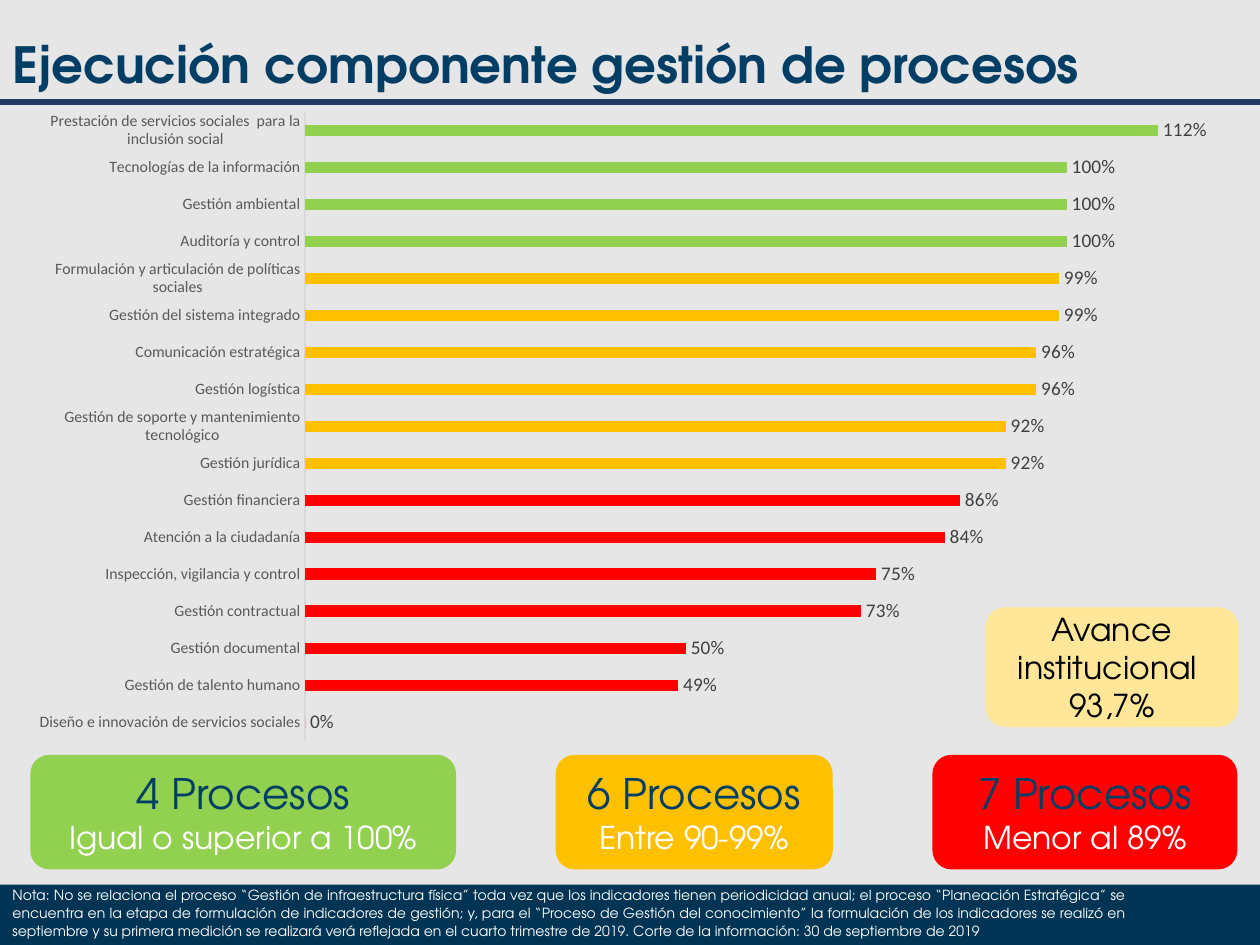
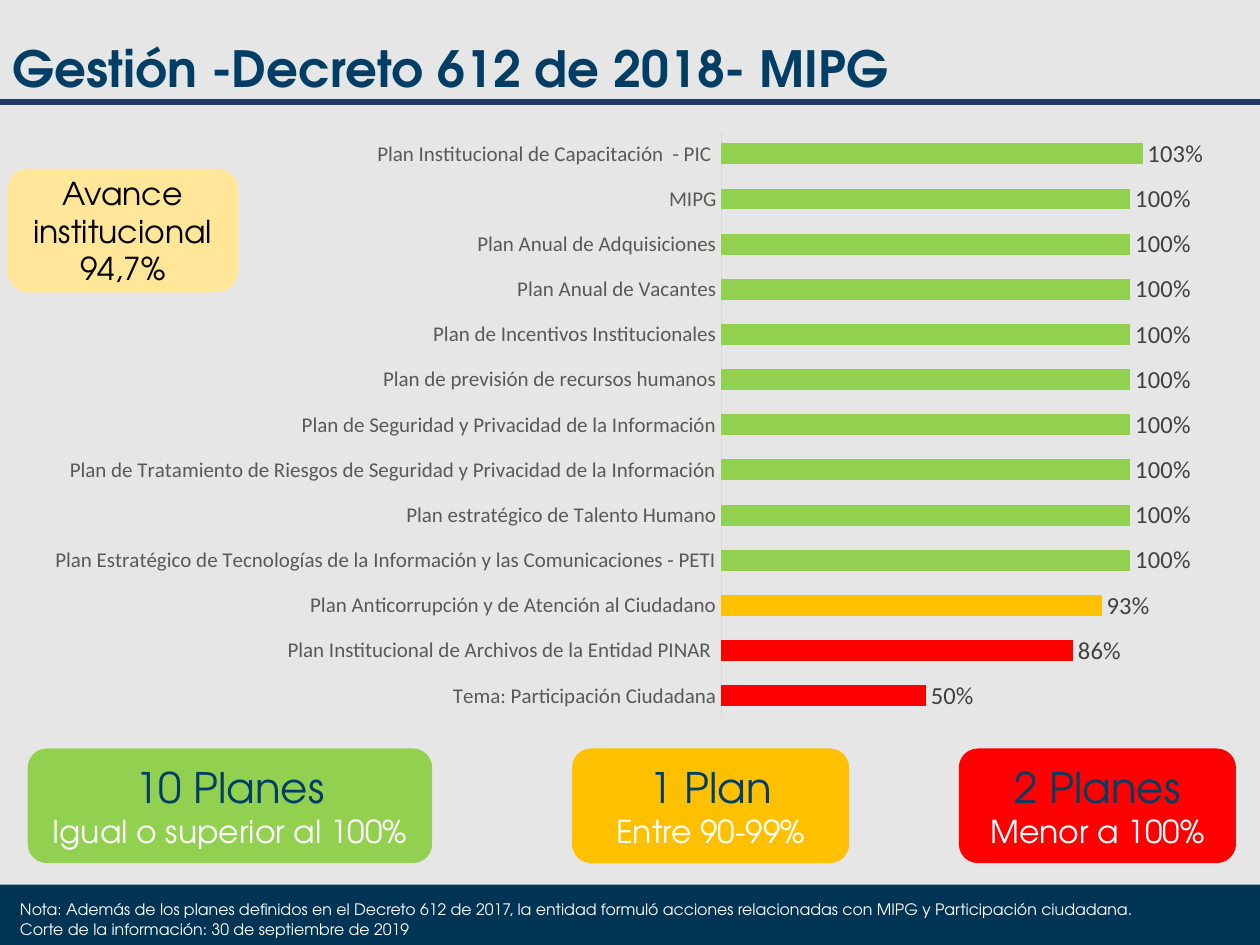
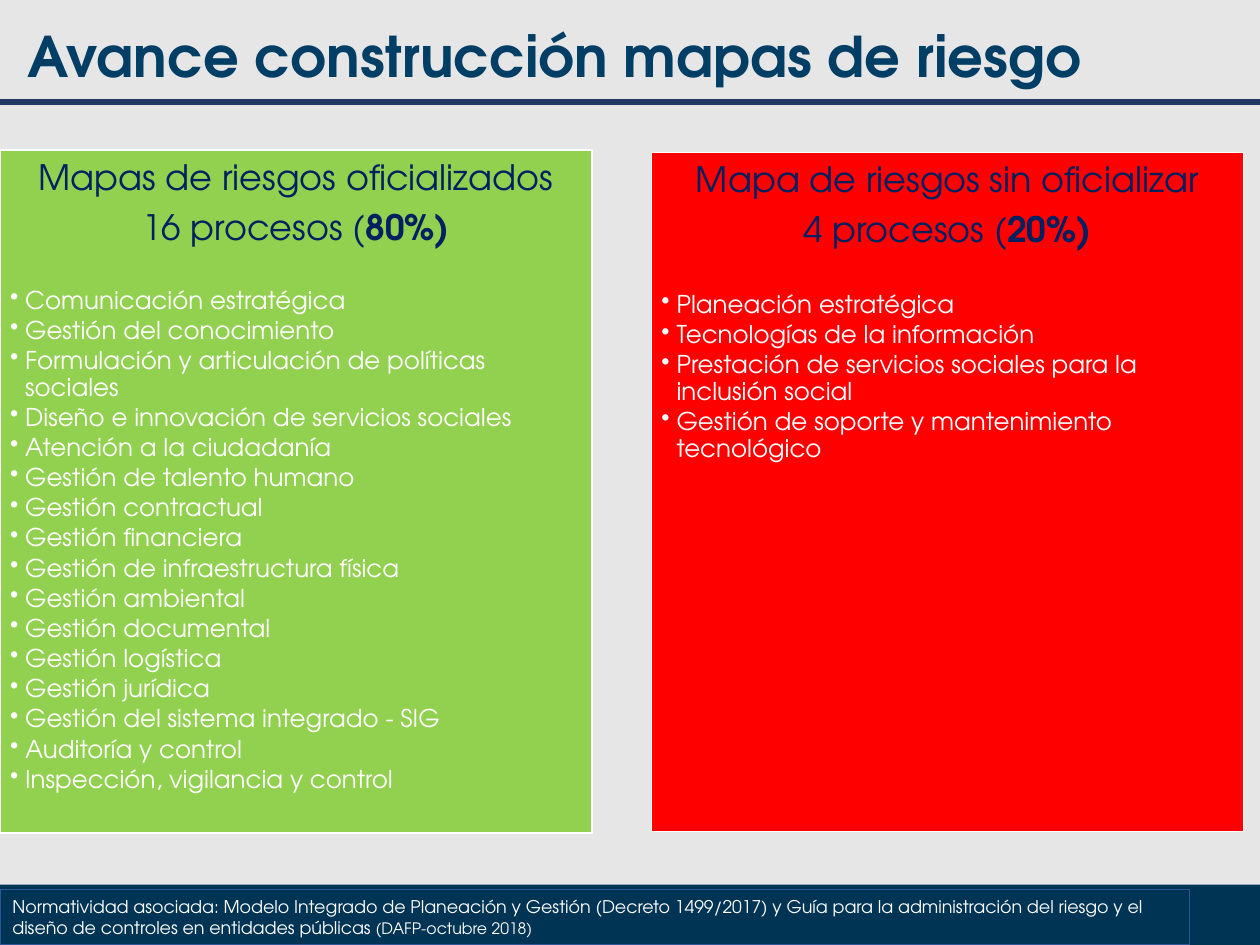
from dataclasses import dataclass

from lxml import etree
from pptx import Presentation
from pptx.chart.data import CategoryChartData
from pptx.dml.color import RGBColor
from pptx.enum.chart import XL_CHART_TYPE, XL_LABEL_POSITION, XL_TICK_MARK
from pptx.enum.shapes import MSO_CONNECTOR, MSO_SHAPE
from pptx.enum.text import MSO_ANCHOR, MSO_AUTO_SIZE, PP_ALIGN
from pptx.oxml.ns import qn
from pptx.util import Inches, Pt

RECT, ROUNDED = MSO_SHAPE.RECTANGLE, MSO_SHAPE.ROUNDED_RECTANGLE
LEFT, CENTER, JUSTIFY = PP_ALIGN.LEFT, PP_ALIGN.CENTER, PP_ALIGN.JUSTIFY
TOP, MIDDLE = MSO_ANCHOR.TOP, MSO_ANCHOR.MIDDLE
NO_FIT, GROW = MSO_AUTO_SIZE.NONE, MSO_AUTO_SIZE.SHAPE_TO_FIT_TEXT
TITLE_ONLY = 5


@dataclass(frozen=True)
class Theme:
    font: str = "TeX Gyre Adventor"
    chart_font: str = "Calibri"
    background: str = "E7E6E6"
    band: str = "003454"
    rule: str = "203864"
    title: str = "003E65"
    heading: str = "002060"
    note_border: str = "2F5597"
    white: str = "FFFFFF"
    black: str = "000000"
    green: str = "92D050"
    amber: str = "FFC000"
    red: str = "FF0000"
    progress: str = "FFE699"
    axis_text: str = "595959"
    axis_line: str = "D9D9D9"
    label: str = "404040"
    count_size: float = 24
    range_size: float = 18
    heading_size: float = 20
    bullet_size: float = 14


THEME = Theme()
STATUS_COLORS = (THEME.green, THEME.amber, THEME.red)

# Content: chart slides (places are left, top, width, height in inches)
PROCESSES = {
    "title": ("Ejecución componente gestión de procesos", 28.5, (0, 0.28, 8.82, 0.51)),
    "chart": {
        "place": (0.13, 0.79, 9.75, 5.2),
        "plot": (2.42, 0.89, 7.25, 4.99),
        "gap": 219, "overlap": 0, "axis_size": 9, "label_size": 11, "axis_width": 0.75,
        "values": [
            ("Diseño e innovación de servicios sociales", 0),
            ("Gestión de talento humano", 0.49),
            ("Gestión documental", 0.5),
            ("Gestión contractual", 0.73),
            ("Inspección, vigilancia y control", 0.75),
            ("Atención a la ciudadanía", 0.84),
            ("Gestión financiera", 0.86),
            ("Gestión jurídica", 0.92),
            ("Gestión de soporte y mantenimiento tecnológico", 0.92),
            ("Gestión logística", 0.96),
            ("Comunicación estratégica", 0.96),
            ("Gestión del sistema integrado", 0.99),
            ("Formulación y articulación de políticas sociales", 0.99),
            ("Auditoría y control", 1),
            ("Gestión ambiental", 1),
            ("Tecnologías de la información", 1),
            ("Prestación de servicios sociales  para la inclusión social", 1.12),
        ],
    },
    "cards_top": 5.99,
    "cards": [
        (0.24, 3.38, "4 Procesos", "Igual o superior a 100%"),
        (4.41, 2.2, "6 Procesos", "Entre 90-99%"),
        (7.4, 2.42, "7 Procesos", "Menor al 89%"),
    ],
    "progress": ((7.82, 4.82, 2.01, 0.95), ["Avance institucional ", "93,7%"]),
    "note": ((0, 6.98, 9.05, 0.52), 8, [
        "Nota: No se relaciona el proceso “Gestión de infraestructura física” toda vez que los "
        "indicadores tienen periodicidad anual; el proceso “Planeación Estratégica” se encuentra "
        "en la etapa de formulación de indicadores de gestión; y, para el “Proceso de Gestión del "
        "conocimiento” la formulación de los indicadores se realizó en septiembre y su primera "
        "medición se realizará verá reflejada en el cuarto trimestre de 2019. Corte de la "
        "información: 30 de septiembre de 2019",
    ]),
}

PLANS = {
    "title": ("Gestión -Decreto 612 de 2018- MIPG", 28.5, (0, 0.31, 8.44, 0.51)),
    "chart": {
        "place": (0.37, 0.94, 9.43, 4.85),
        "plot": (5.73, 1.04, 3.89, 4.66),
        "gap": 115, "overlap": -20, "axis_size": 12, "label_size": 14, "axis_width": 1,
        "values": [
            ("Tema: Participación Ciudadana", 0.5),
            ("Plan Institucional de Archivos de la Entidad PINAR ", 0.86),
            ("Plan Anticorrupción y de Atención al Ciudadano", 0.93),
            ("Plan Estratégico de Tecnologías de la Información y las Comunicaciones - PETI", 1),
            ("Plan estratégico de Talento Humano", 1),
            ("Plan de Tratamiento de Riesgos de Seguridad y Privacidad de la Información", 1),
            ("Plan de Seguridad y Privacidad de la Información", 1),
            ("Plan de previsión de recursos humanos", 1),
            ("Plan de Incentivos Institucionales", 1),
            ("Plan Anual de Vacantes", 1),
            ("Plan Anual de Adquisiciones", 1),
            ("MIPG", 1),
            ("Plan Institucional de Capacitación  - PIC ", 1.03),
        ],
    },
    "cards_top": 5.94,
    "cards": [
        (0.22, 3.21, "10 Planes", "Igual o superior al 100%"),
        (4.54, 2.2, "1 Plan", "Entre 90-99%"),
        (7.61, 2.2, "2 Planes", "Menor a 100%"),
    ],
    "progress": ((0.06, 1.34, 1.83, 0.98), ["Avance institucional 94,7%"]),
    "note": ((0.06, 7.08, 9.89, 0.43), 9, [
        "Nota: Además de los planes definidos en el Decreto 612 de 2017, la entidad formuló "
        "acciones relacionadas con MIPG y Participación ciudadana.",
        "Corte de la información: 30 de septiembre de 2019",
    ]),
}

# Content: risk map slide
RISK_TITLE = ("Avance construcción mapas de riesgo", 32, (0.12, 0.22, 9.76, 0.51))
RISK_PANELS = [
    {
        "place": (0, 1.19, 4.7, 5.42), "fill": THEME.green, "list_gap": 23,
        "heading": "Mapas de riesgos oficializados", "count": "16 procesos (", "share": "80%)",
        "items": [
            "Comunicación estratégica",
            "Gestión del conocimiento",
            "Formulación y articulación de políticas sociales",
            "Diseño e innovación de servicios sociales",
            "Atención a la ciudadanía",
            "Gestión de talento humano",
            "Gestión contractual",
            "Gestión financiera",
            "Gestión de infraestructura física",
            "Gestión ambiental",
            "Gestión documental",
            "Gestión logística",
            "Gestión jurídica",
            "Gestión del sistema integrado - SIG",
            "Auditoría y control",
            "Inspección, vigilancia y control",
        ],
    },
    {
        "place": (5.17, 1.21, 4.7, 5.39), "fill": THEME.red, "list_gap": 24,
        "heading": "Mapa de riesgos sin oficializar", "count": "4 procesos (", "share": "20%)",
        "items": [
            "Planeación estratégica",
            "Tecnologías de la información",
            "Prestación de servicios sociales para la inclusión social",
            "Gestión de soporte y mantenimiento tecnológico",
        ],
    },
]
RISK_NOTE_PLACE = (0, 7.06, 9.44, 0.44)
RISK_NOTE = [
    ("Normatividad asociada: Modelo Integrado de Planeación y Gestión (Decreto 1499/2017) y Guía "
     "para la administración del riesgo y el diseño de controles en entidades públicas ", 10),
    ("(DAFP-octubre 2018)", 9),
]


# Text and shape helpers
def rgb(color):
    return RGBColor.from_string(color)


def inches(place):
    return [Inches(value) for value in place]


def style_font(font, size, color, bold=False, name=THEME.font):
    font.name, font.size, font.bold = name, Pt(size), bold
    font.color.rgb = rgb(color)


def prepare(box, anchor, fit=NO_FIT):
    frame = box.text_frame
    frame.word_wrap = True
    frame.auto_size = fit
    frame.vertical_anchor = anchor
    return frame


def add_para(frame, spans, align=LEFT, spacing=None, after=None, bullet=False):
    """Add a paragraph of (text, size, color, bold) spans."""
    first = frame.paragraphs[0]
    para = frame.add_paragraph() if first.runs else first
    para.alignment = align
    if spacing:
        para.line_spacing = spacing
    if after is not None:
        para.space_after = Pt(after)
    if bullet:
        properties = para._p.get_or_add_pPr()
        properties.set("marL", str(Inches(0.12)))
        properties.set("indent", str(-Inches(0.12)))
        etree.SubElement(properties, qn("a:buChar")).set("char", "•")
    for text, size, color, bold in spans:
        span = para.add_run()
        span.text = text
        style_font(span.font, size, color, bold)


def add_box(page, kind, place, fill=None, border=None, border_width=1):
    box = page.shapes.add_shape(kind, *inches(place))
    box.shadow.inherit = False
    if fill:
        box.fill.solid()
        box.fill.fore_color.rgb = rgb(fill)
    else:
        box.fill.background()
    if border:
        box.line.color.rgb = rgb(border)
        box.line.width = Pt(border_width)
    else:
        box.line.fill.background()
    return box


# Shared slide parts
def dress_master(deck, page):
    """Set the background and move the footer band and title rule to the master."""
    master = deck.slide_master
    master.background.fill.solid()
    master.background.fill.fore_color.rgb = rgb(THEME.background)
    band = add_box(page, RECT, (0, 7.02, 10, 0.48), THEME.band)
    rule = page.shapes.add_connector(MSO_CONNECTOR.STRAIGHT, *inches((0, 0.81, 10, 0.81)))
    rule.line.color.rgb = rgb(THEME.rule)
    rule.line.width = Pt(3)
    etree.SubElement(rule._element.spPr, qn("a:effectLst"))
    for index, part in enumerate((band, rule), start=2):
        master.shapes.element.insert(index, part._element)


def add_page(deck, title):
    text, size, place = title
    page = deck.slides.add_slide(deck.slide_layouts[TITLE_ONLY])
    box = page.shapes.title
    box.left, box.top, box.width, box.height = inches(place)
    frame = prepare(box, MIDDLE)
    add_para(frame, [(text, size, THEME.title, True)], spacing=0.9)
    return page


# Chart slides
def status_color(value):
    if value >= 1:
        return THEME.green
    return THEME.amber if value >= 0.9 else THEME.red


def place_plot(chart, place, plot):
    """Fix the inner plot area as fractions of the chart frame."""
    left, top, width, height = place
    fractions = {
        "x": (plot[0] - left) / width, "y": (plot[1] - top) / height,
        "w": plot[2] / width, "h": plot[3] / height,
    }
    area = chart._chartSpace.chart.plotArea
    for old in area.findall(qn("c:layout")):
        area.remove(old)
    layout = etree.Element(qn("c:layout"))
    area.insert(0, layout)
    manual = etree.SubElement(layout, qn("c:manualLayout"))
    settings = [("layoutTarget", "inner"), ("xMode", "edge"), ("yMode", "edge")]
    settings += [(key, f"{value:.3f}") for key, value in fractions.items()]
    for tag, value in settings:
        etree.SubElement(manual, qn(f"c:{tag}")).set("val", value)


def add_bars(page, content):
    data = CategoryChartData(number_format="0%")
    names, values = zip(*content["values"])
    data.categories = names
    data.add_series("Series 1", values)
    chart = page.shapes.add_chart(
        XL_CHART_TYPE.BAR_CLUSTERED, *inches(content["place"]), data).chart
    chart.has_title = chart.has_legend = False
    style_font(chart.font, 10, THEME.black, name=THEME.chart_font)
    place_plot(chart, content["place"], content["plot"])

    category = chart.category_axis
    category.major_tick_mark = category.minor_tick_mark = XL_TICK_MARK.NONE
    category.has_major_gridlines = False
    category.format.line.color.rgb = rgb(THEME.axis_line)
    category.format.line.width = Pt(content["axis_width"])
    style_font(category.tick_labels.font, content["axis_size"], THEME.axis_text,
               name=THEME.chart_font)
    scale = chart.value_axis
    scale.visible = scale.has_major_gridlines = False
    scale.minimum_scale, scale.maximum_scale = 0, 1.2

    bars = chart.plots[0]
    bars.gap_width, bars.overlap = content["gap"], content["overlap"]
    bars.vary_by_categories = False
    series = bars.series[0]
    series.format.fill.solid()
    series.format.fill.fore_color.rgb = rgb(THEME.green)
    for index, value in enumerate(values):
        color = status_color(value)
        if color != THEME.green:
            fill = series.points[index].format.fill
            fill.solid()
            fill.fore_color.rgb = rgb(color)
    labels = series.data_labels
    labels.show_value = True
    labels.number_format, labels.number_format_is_linked = "0%", False
    labels.position = XL_LABEL_POSITION.OUTSIDE_END
    style_font(labels.font, content["label_size"], THEME.label, name=THEME.chart_font)


def fill_chart_page(page, content):
    add_bars(page, content["chart"])
    for (left, width, count, limits), color in zip(content["cards"], STATUS_COLORS):
        card = add_box(page, ROUNDED, (left, content["cards_top"], width, 0.91), color)
        frame = prepare(card, MIDDLE)
        add_para(frame, [(count, THEME.count_size, THEME.title, False)], CENTER)
        add_para(frame, [(limits, THEME.range_size, THEME.white, False)], CENTER)

    place, lines = content["progress"]
    frame = prepare(add_box(page, ROUNDED, place, THEME.progress), MIDDLE)
    for line in lines:
        add_para(frame, [(line, THEME.range_size, THEME.black, False)], CENTER)

    place, size, lines = content["note"]
    frame = prepare(page.shapes.add_textbox(*inches(place)), TOP, GROW)
    for line in lines:
        add_para(frame, [(line, size, THEME.white, False)], JUSTIFY, spacing=1.07)


# Risk map slide
def add_risk_panel(page, panel):
    box = add_box(page, RECT, panel["place"], panel["fill"], THEME.white)
    frame = prepare(box, TOP)
    frame.margin_left = frame.margin_right = Inches(0.08)
    frame.margin_top = frame.margin_bottom = Inches(0.08)
    style = (THEME.heading_size, THEME.heading)
    add_para(frame, [(panel["heading"], *style, False)], CENTER, 0.9, 7)
    add_para(frame, [(panel["count"], *style, False), (panel["share"], *style, True)],
             CENTER, 0.9, panel["list_gap"])
    for item in panel["items"]:
        add_para(frame, [(item, THEME.bullet_size, THEME.white, False)],
                 spacing=0.9, after=2.1, bullet=True)


def fill_risk_page(page):
    note = add_box(page, RECT, RISK_NOTE_PLACE, border=THEME.note_border, border_width=0.75)
    add_para(prepare(note, TOP, GROW),
             [(text, size, THEME.white, False) for text, size in RISK_NOTE])
    for panel in RISK_PANELS:
        add_risk_panel(page, panel)


def main():
    deck = Presentation()
    deck.slide_width, deck.slide_height = Inches(10), Inches(7.5)
    for number, content in enumerate((PROCESSES, PLANS)):
        page = add_page(deck, content["title"])
        if number == 0:
            dress_master(deck, page)
        fill_chart_page(page, content)
    fill_risk_page(add_page(deck, RISK_TITLE))
    deck.save("out.pptx")


if __name__ == "__main__":
    main()
